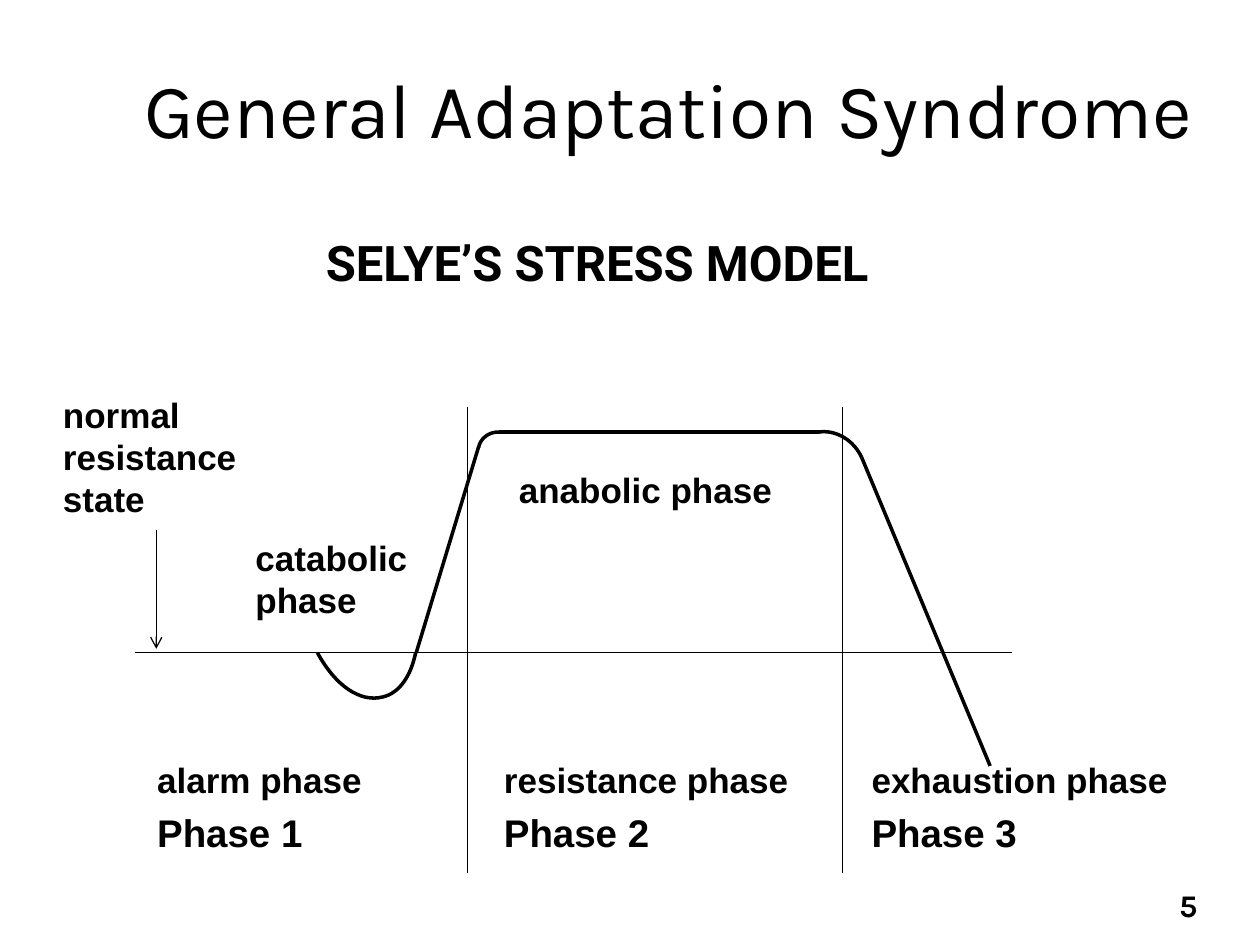
"""Build the General Adaptation Syndrome slide with its stress-response curve."""
from itertools import pairwise

from lxml import etree
from pptx import Presentation
from pptx import util as u
from pptx.dml.color import RGBColor
from pptx.enum import shapes, text
from pptx.oxml import ns

THEME = {
    "ink": RGBColor(0, 0, 0),
    "title": {"font": "Karla", "size": 44},
    "subtitle": {"font": "Roboto", "size": 28, "bold": True},
    "label": {"font": "Arial", "size": 20, "bold": True},
    "phase": {"font": "Arial", "size": 22, "bold": True, "before": 5},
    "number": {"font": "Karla", "size": 18, "bold": True, "align": text.PP_ALIGN.RIGHT},
    "thin": 0.75,
    "thick": 2,
}

TITLE = ("General Adaptation Syndrome", (0.79, 0.58, 25.4, 3.18))
SUBTITLE = ("SELYE’S STRESS MODEL", (6.32, 4.57, 13.59, 2.54))
NUMBER = ("5", (18.47, 17.73, 5.92, 1.32))
LABELS = [
    ("normal\nresistance\nstate", (1.02, 7.8, 4.34, 2.74)),
    ("anabolic phase", (10.21, 9.32, 6.02, 1.27)),
    ("catabolic phase", (4.9, 10.69, 3.78, 2.24)),
]
PHASES = [
    ("alarm phase", 2.92, 5.03),
    ("resistance phase", 9.91, 6.55),
    ("exhaustion phase", 17.32, 7.62),
]
PHASE_TOP, PHASE_HEIGHT = 15.16, 2.18

BASELINE = [(2.72, 13.16), (20.4, 13.16)]
DIVIDERS, DIVIDER_TOP, DIVIDER_END = (9.42, 16.99), 8.2, 17.6
ARROW = [(3.15, 10.69), (3.15, 13.08)]
STRAIGHTS = [
    [(8.39, 13.16), (9.65, 9.0)],
    [(10.06, 8.71), (16.51, 8.71)],
    [(17.37, 9.22), (19.96, 15.44)],
]
ARCS = [
    [(6.4, 13.16), (6.76, 13.82), (7.26, 14.17), (7.72, 14.05),
     (8.05, 13.97), (8.28, 13.64), (8.38, 13.16)],
    [(9.65, 9.02), (9.68, 8.86), (9.83, 8.71), (10.06, 8.71)],
    [(16.51, 8.71), (16.87, 8.66), (17.22, 8.89), (17.37, 9.22)],
]
ARC_STEPS = 16


def write(para, words, font, size, bold=False, before=0, align=text.PP_ALIGN.LEFT):
    para.text = words
    para.alignment = align
    para.space_before = u.Pt(before)
    for span in para.runs:
        span.font.name = font
        span.font.size = u.Pt(size)
        span.font.bold = bold
        span.font.color.rgb = THEME["ink"]


def add_text(page, words, place, **style):
    box = page.shapes.add_textbox(*map(u.Cm, place))
    box.text_frame.word_wrap = True
    write(box.text_frame.paragraphs[0], words, **style)
    return box.text_frame


def ink_line(shape, width):
    shape.line.color.rgb = THEME["ink"]
    shape.line.width = u.Pt(width)


def add_line(page, ends, width, arrow=False):
    (left, top), (right, bottom) = ends
    line = page.shapes.add_connector(
        shapes.MSO_CONNECTOR.STRAIGHT, *map(u.Cm, (left, top, right, bottom)))
    ink_line(line, width)
    if arrow:
        tail = etree.SubElement(line.line._get_or_add_ln(), ns.qn("a:tailEnd"))
        tail.set("type", "arrow")
    etree.SubElement(line._element.spPr, ns.qn("a:effectLst"))


def bezier(points, t):
    while len(points) > 1:
        points = [tuple(a + (b - a) * t for a, b in zip(p, q))
                  for p, q in pairwise(points)]
    return tuple(map(u.Cm, points[0]))


def add_arc(page, controls):
    vertices = [bezier(controls[first:first + 4], step / ARC_STEPS)
                for first in range(0, len(controls) - 1, 3)
                for step in range(1, ARC_STEPS + 1)]
    builder = page.shapes.build_freeform(*map(u.Cm, controls[0]))
    builder.add_line_segments(vertices, close=False)
    arc = builder.convert_to_shape()
    arc.shadow.inherit = False
    arc.fill.background()
    ink_line(arc, THEME["thick"])


def main():
    deck = Presentation()
    deck.slide_width, deck.slide_height = u.Cm(25.4), u.Cm(19.05)
    page = deck.slides.add_slide(deck.slide_layouts[6])

    title = add_text(page, *TITLE, align=text.PP_ALIGN.CENTER, **THEME["title"])
    title.vertical_anchor = text.MSO_ANCHOR.MIDDLE
    add_text(page, *SUBTITLE, **THEME["subtitle"])
    for words, place in LABELS:
        add_text(page, words, place, **THEME["label"])
    for number, (words, left, width) in enumerate(PHASES, 1):
        frame = add_text(page, words, (left, PHASE_TOP, width, PHASE_HEIGHT),
                         **THEME["label"])
        write(frame.add_paragraph(), f"Phase {number}", **THEME["phase"])

    add_line(page, ARROW, THEME["thin"], arrow=True)
    for x in DIVIDERS:
        add_line(page, [(x, DIVIDER_TOP), (x, DIVIDER_END)], THEME["thin"])
    for controls in ARCS:
        add_arc(page, controls)
    for ends in STRAIGHTS:
        add_line(page, ends, THEME["thick"])
    add_line(page, BASELINE, THEME["thin"])
    add_text(page, *NUMBER, **THEME["number"])
    deck.save("out.pptx")


if __name__ == "__main__":
    main()
